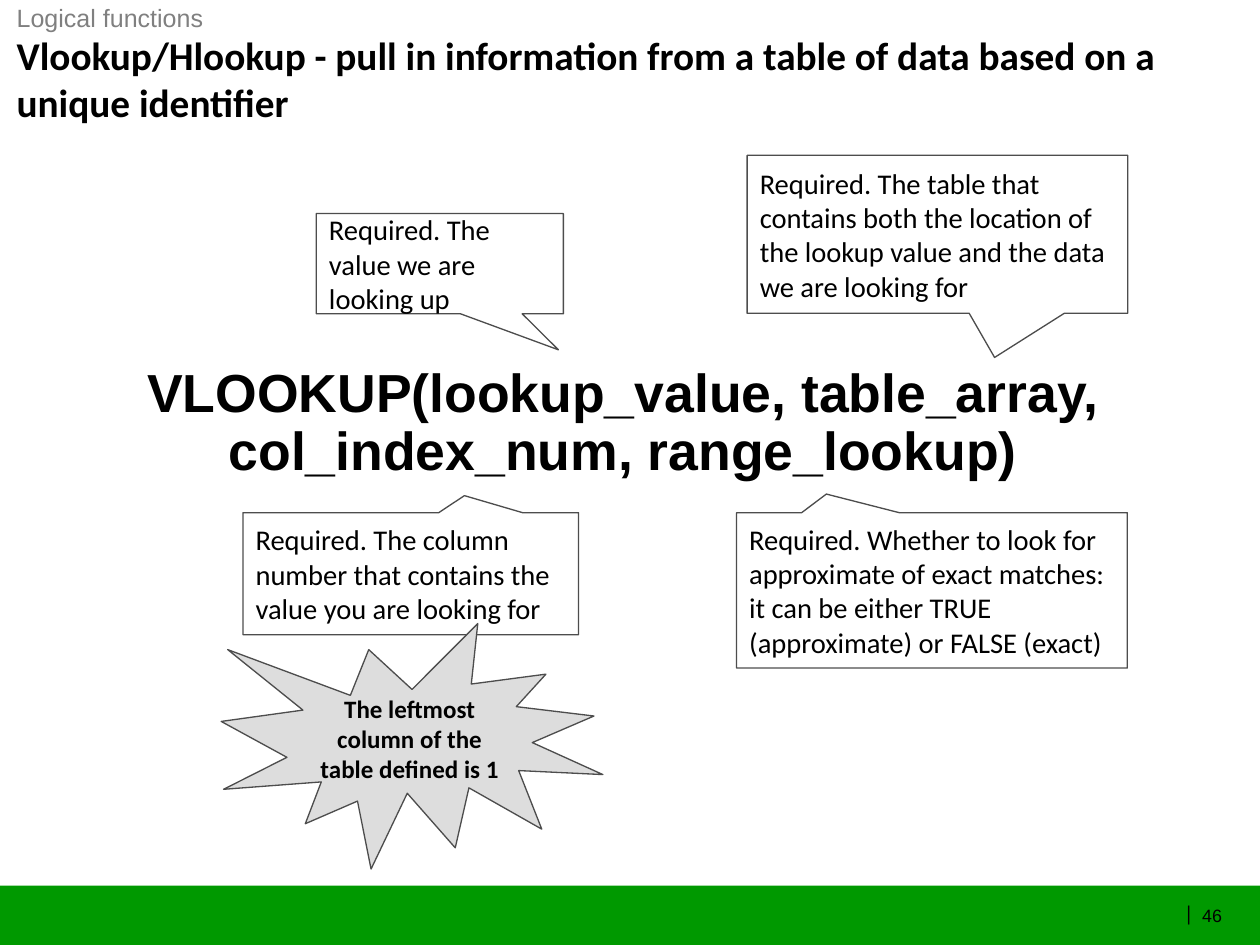
from pptx import Presentation
from pptx.dml.color import RGBColor
from pptx.enum.shapes import MSO_SHAPE
from pptx.enum.text import MSO_ANCHOR, PP_ALIGN
from pptx.util import Cm, Pt

RECT = MSO_SHAPE.RECTANGLE
CALLOUT = MSO_SHAPE.RECTANGULAR_CALLOUT
BURST = MSO_SHAPE.EXPLOSION1
TOP, MIDDLE = MSO_ANCHOR.TOP, MSO_ANCHOR.MIDDLE
LEFT, CENTER, RIGHT = PP_ALIGN.LEFT, PP_ALIGN.CENTER, PP_ALIGN.RIGHT

COLORS = {"green": "009900", "black": "000000", "gray": "808080",
          "line": "4D4D4D", "light": "DDDDDD"}

SIZE = (24.89, 18.67)
BAR = (0, 17.5, 24.89, 1.17)

HEAD = ("Vlookup/Hlookup - pull in information from a table of data "
        "based on a unique identifier")
FORMULA = "VLOOKUP(lookup_value, table_array, col_index_num, range_lookup)"

LABELS = [
    {"box": (0.33, 0.61, 23.95, 1.88), "text": HEAD, "size": 22, "bold": True},
    {"box": (0.33, 0.05, 10.16, 0.61), "text": "Logical functions",
     "size": 14, "font": "Arial", "color": "gray"},
    {"box": (1.12, 7.24, 22.38, 2.31), "text": FORMULA, "size": 30,
     "font": "Arial", "bold": True, "align": CENTER, "space": 0.9},
    {"box": (23.39, 17.78, 0.1, 0.51), "text": "|", "size": 12,
     "align": RIGHT, "anchor": MIDDLE, "wrap": False},
    {"box": (23.75, 17.88, 0.58, 0.43), "text": "46", "size": 10,
     "font": "Arial", "wrap": False},
]

NOTES = [
    ((6.25, 4.22, 4.88, 1.98), (0.48, 0.86),
     "Required. The value we are looking up"),
    ((14.76, 3.07, 7.52, 3.12), (0.15, 0.78),
     "Required. The table that contains both the location of the lookup "
     "value and the data we are looking for"),
    ((4.8, 10.13, 6.63, 2.41), (0.16, -0.64),
     "Required. The column number that contains the value you are "
     "looking for"),
    ((14.55, 10.13, 7.72, 3.07), (-0.27, -0.62),
     "Required. Whether to look for approximate of exact matches: it can "
     "be either TRUE (approximate) or FALSE (exact)"),
]

TIP = ((4.37, 12.32, 7.54, 4.85), "The leftmost column of the table defined is 1")


def rgb(name):
    return RGBColor.from_string(COLORS[name])


def write(frame, text, size, font="Calibri", color="black", bold=False,
          align=LEFT, anchor=TOP, wrap=True, space=None):
    frame.word_wrap = wrap
    frame.vertical_anchor = anchor
    para = frame.paragraphs[0]
    para.alignment = align
    if space:
        para.line_spacing = space
    run = para.add_run()
    run.text = text
    run.font.size = Pt(size)
    run.font.name = font
    run.font.bold = bold
    run.font.color.rgb = rgb(color)


def add_label(slide, box, **style):
    frame = slide.shapes.add_textbox(*map(Cm, box)).text_frame
    frame.margin_left = frame.margin_right = 0
    frame.margin_top = frame.margin_bottom = 0
    write(frame, **style)


def add_form(slide, kind, box, fill=None, line=None):
    form = slide.shapes.add_shape(kind, *map(Cm, box))
    form.shadow.inherit = False
    if fill:
        form.fill.solid()
        form.fill.fore_color.rgb = rgb(fill)
    else:
        form.fill.background()
    if line:
        form.line.color.rgb = rgb(line)
        form.line.width = Pt(0.75)
    else:
        form.line.fill.background()
    return form


def main():
    deck = Presentation()
    deck.slide_width, deck.slide_height = map(Cm, SIZE)
    slide = deck.slides.add_slide(deck.slide_layouts[6])

    add_form(slide, RECT, BAR, fill="green")
    for label in LABELS:
        add_label(slide, **label)

    for box, tail, text in NOTES:
        note = add_form(slide, CALLOUT, box, line="line")
        note.adjustments[0], note.adjustments[1] = tail
        write(note.text_frame, text, 16, anchor=MIDDLE)

    box, text = TIP
    tip = add_form(slide, BURST, box, fill="light", line="line")
    write(tip.text_frame, text, 14, bold=True, align=CENTER, anchor=MIDDLE)

    deck.save("out.pptx")


if __name__ == "__main__":
    main()
